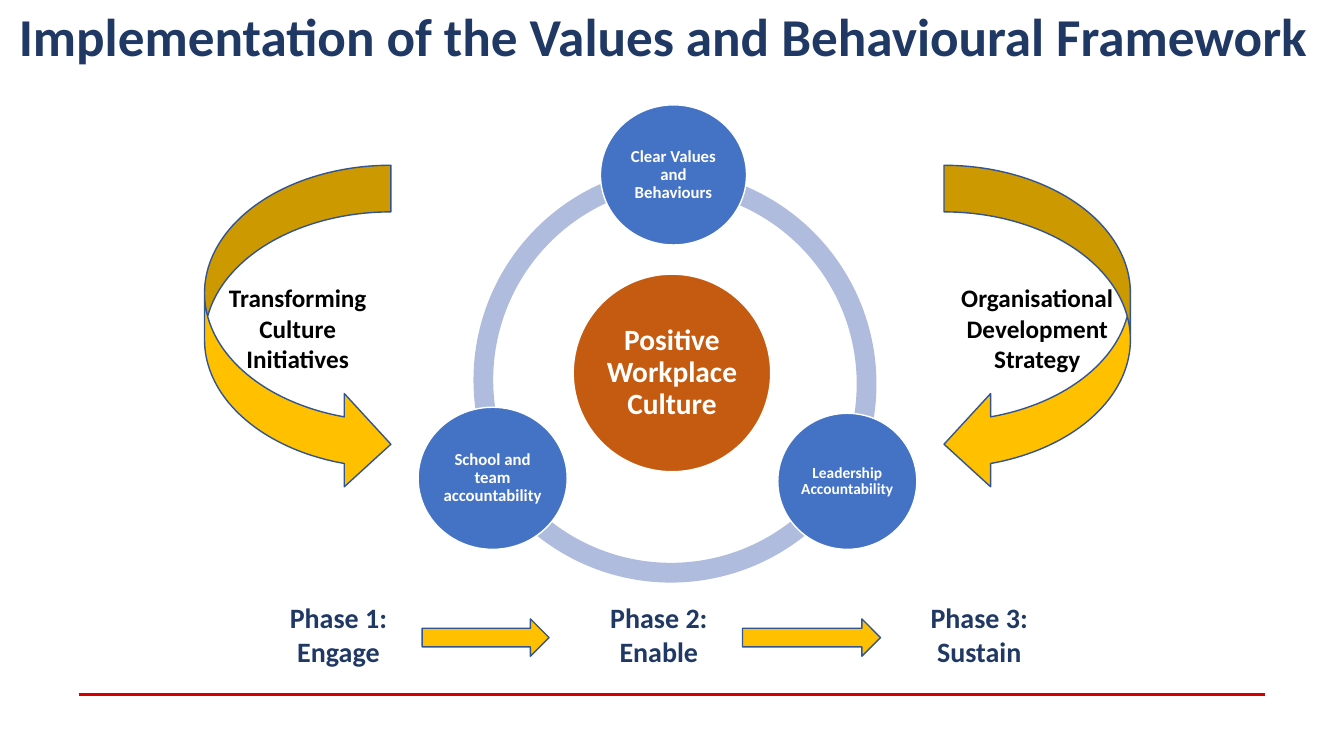
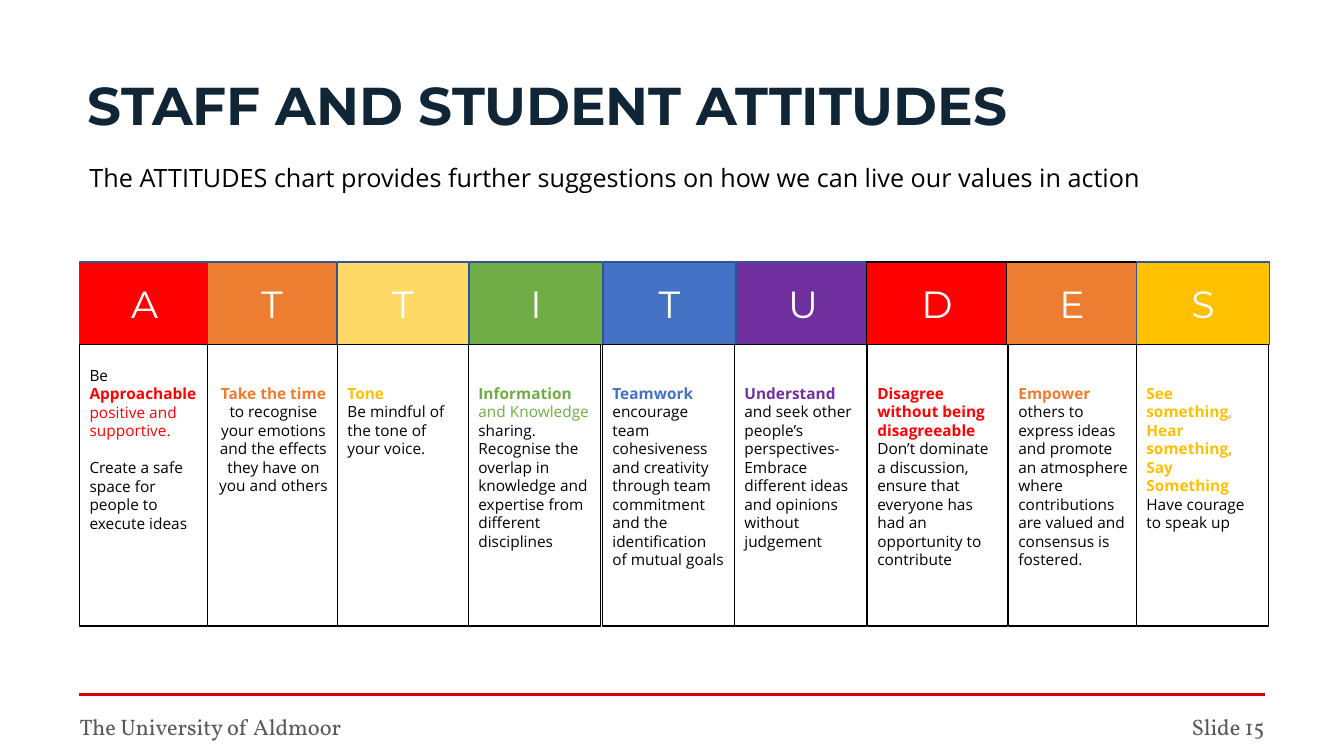
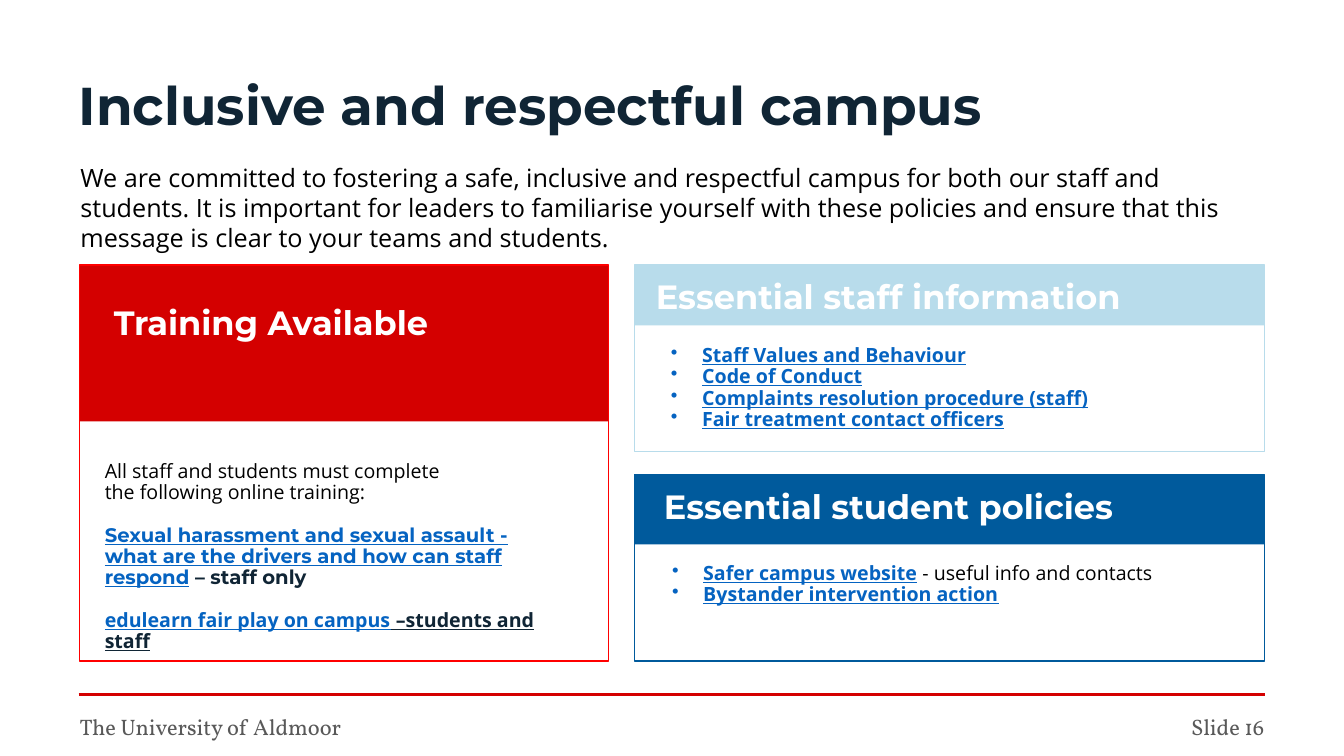
"""Build three slides on workplace values, attitudes and an inclusive campus."""
import dataclasses

import lxml.etree
import pptx
import pptx.dml.color
import pptx.enum.shapes
import pptx.enum.text
import pptx.oxml
import pptx.oxml.ns
import pptx.util

Inches = pptx.util.Inches
Pt = pptx.util.Pt
RGB = pptx.dml.color.RGBColor.from_string
SHAPE = pptx.enum.shapes.MSO_SHAPE
ALIGN = pptx.enum.text.PP_ALIGN
ANCHOR = pptx.enum.text.MSO_ANCHOR
qn = pptx.oxml.ns.qn


@dataclasses.dataclass(frozen=True)
class Style:
    size: float
    font: str
    color: str
    bold: bool = False
    underline: bool = False


@dataclasses.dataclass(frozen=True)
class Theme:
    white: str = "FFFFFF"
    black: str = "000000"
    red: str = "D40000"
    bright_red: str = "FF0000"
    orange: str = "ED7D31"
    rust: str = "C55A11"
    gold: str = "FFC000"
    pale_gold: str = "FFD966"
    green: str = "70AD47"
    blue: str = "4472C4"
    purple: str = "7030A0"
    ring: str = "B0BCDE"
    outline: str = "325491"
    pale_blue: str = "B8DCEB"
    deep_blue: str = "005A9C"
    navy: str = "203864"
    ink: str = "102535"
    link: str = "0563C1"
    framework_title: Style = Style(38, "Calibri", navy, True)
    title: Style = Style(38, "Montserrat", ink, True)
    footer: Style = Style(16, "Vollkorn", "595959")
    intro: Style = Style(18, "Open Sans", black)
    core: Style = Style(21, "Calibri", white, True)
    strategy: Style = Style(18, "Calibri", black, True)
    phase: Style = Style(20, "Calibri", navy, True)
    letter: Style = Style(27, "Montserrat", white)
    attitude: Style = Style(11, "Open Sans", black)
    card_heading: Style = Style(24, "Montserrat", white, True)
    card_body: Style = Style(14, "Open Sans", black)
    card_link: Style = Style(14, "Open Sans", link, True, True)
    attitude_gap: float = 13.3
    card_gap: float = 15.2


theme = Theme()
restyle = dataclasses.replace


def write(frame, paragraphs, align=ALIGN.LEFT, anchor=ANCHOR.TOP, inset=(0, 0), spacing=0.9):
    frame.word_wrap = True
    frame.auto_size = pptx.enum.text.MSO_AUTO_SIZE.NONE
    frame.vertical_anchor = anchor
    frame.margin_left = frame.margin_right = Inches(inset[0])
    frame.margin_top = frame.margin_bottom = Inches(inset[1])
    for index, runs in enumerate(paragraphs):
        paragraph = frame.add_paragraph() if index else frame.paragraphs[0]
        paragraph.alignment = align
        paragraph.line_spacing = spacing
        for text, style in runs:
            run = paragraph.add_run()
            run.text = text
            run.font.size = Pt(style.size)
            run.font.name = style.font
            run.font.bold = style.bold
            run.font.underline = style.underline
            run.font.color.rgb = RGB(style.color)


def add_shape(slide, kind, box, fill=None, line=None):
    shape = slide.shapes.add_shape(kind, *map(Inches, box))
    shape.shadow.inherit = False
    if fill:
        shape.fill.solid()
        shape.fill.fore_color.rgb = RGB(fill)
    else:
        shape.fill.background()
    if line:
        shape.line.color.rgb = RGB(line)
        shape.line.width = Pt(1)
    else:
        shape.line.fill.background()
    return shape


deck = pptx.Presentation()
deck.slide_width, deck.slide_height = Inches(13.34), Inches(7.5)
layout = deck.slide_layouts[5]

headings = [
    ("Implementation of the Values and Behavioural Framework", theme.framework_title,
     (0.09, 0.1, 12.99, 0.86), ALIGN.CENTER, None),
    ("STAFF AND STUDENT ATTITUDES", theme.title, (0.87, 0.79, 11.76, 1.18), ALIGN.LEFT, "Slide 15"),
    ("Inclusive and respectful campus", theme.title, (0.78, 0.79, 11.76, 1.18), ALIGN.LEFT, "Slide 16"),
]
for heading, style, box, align, number in headings:
    slide = deck.slides.add_slide(layout)
    title = slide.shapes.title
    title.left, title.top, title.width, title.height = map(Inches, box)
    write(title.text_frame, [[(heading, style)]], align)
    if number:
        for text, left, width, side in [
            ("The University of Aldmoor", 0.79, 5.25, ALIGN.LEFT),
            (number, 9.92, 2.63, ALIGN.RIGHT),
        ]:
            footer = slide.shapes.add_textbox(Inches(left), Inches(7.08), Inches(width), Inches(0.2))
            write(footer.text_frame, [[(text, theme.footer)]], side, spacing=1.0)

framework, attitudes, campus = deck.slides

rule = framework.shapes.add_connector(
    pptx.enum.shapes.MSO_CONNECTOR.STRAIGHT, Inches(0.78), Inches(6.89), Inches(12.56), Inches(6.89))
rule.line.color.rgb = RGB(theme.red)
rule.line.width = Pt(2.5)
lxml.etree.SubElement(rule.element.spPr, qn("a:effectLst"))
rule.element.nvCxnSpPr.cNvPr.set("id", "20")
layout.shapes.element.append(rule.element)

for left, top, start, end in [
    (4.7, 1.64, 92.09, 160.99),
    (4.53, 1.52, 19.6, 89.02),
    (4.44, 1.68, 164.01, 16.56),
]:
    arc = add_shape(framework, SHAPE.BLOCK_ARC, (left, top, 4.26, 4.26), theme.ring)
    for index, value in enumerate((start, end, 0.046)):
        arc.adjustments[index] = value

for text, box, fill, size in [
    ("Positive Workplace Culture", (5.69, 2.72, 1.96, 1.96), theme.rust, 21),
    ("Clear Values and Behaviours", (5.96, 1.04, 1.45, 1.39), theme.blue, 12),
    ("Leadership Accountability", (7.72, 4.1, 1.38, 1.35), theme.blue, 11),
    ("School and team accountability", (4.15, 4.04, 1.48, 1.41), theme.blue, 12),
]:
    circle = add_shape(framework, SHAPE.OVAL, box, fill, theme.white)
    write(circle.text_frame, [[(text, restyle(theme.core, size=size))]],
          ALIGN.CENTER, ANCHOR.MIDDLE, (0.02, 0.02))

for text, kind, left in [
    ("Organisational Development Strategy", SHAPE.CURVED_LEFT_ARROW, 9.37),
    ("Transforming Culture Initiatives", SHAPE.CURVED_RIGHT_ARROW, 2.03),
]:
    strategy = add_shape(framework, kind, (left, 1.64, 1.85, 3.23), theme.gold, theme.outline)
    write(strategy.text_frame, [[(text, theme.strategy)]],
          ALIGN.CENTER, ANCHOR.MIDDLE, (0.1, 0.05), 1.0)

phase_width = 1.66
for index, (text, arrow_width) in enumerate([
    ("Phase 1: Engage", 1.26), ("Phase 2: Enable", 1.37), ("Phase 3: Sustain", None),
]):
    left = 2.53 + index * 3.18
    phase = add_shape(framework, SHAPE.RECTANGLE, (left, 5.95, phase_width, 0.69), theme.white, theme.white)
    write(phase.text_frame, [[(text, theme.phase)]], ALIGN.CENTER, ANCHOR.MIDDLE, (0.1, 0.05), 1.0)
    if arrow_width:
        add_shape(framework, SHAPE.RIGHT_ARROW, (left + phase_width, 6.14, arrow_width, 0.37),
                  theme.gold, theme.outline)

for slide, text, box in [
    (attitudes, "The ATTITUDES chart provides further suggestions on how we can live our values in action",
     (0.79, 1.56, 11.64, 0.4)),
    (campus, "We are committed to fostering a safe, inclusive and respectful campus for both our staff and "
     "students. It is important for leaders to familiarise yourself with these policies and ensure that "
     "this message is clear to your teams and students.", (0.7, 1.56, 11.64, 1.01)),
]:
    intro = slide.shapes.add_textbox(*map(Inches, box))
    write(intro.text_frame, [[(text, theme.intro)]], inset=(0.1, 0.05), spacing=1.0)

plain = theme.attitude
red_word, orange_word, gold_word, green_word, blue_word, purple_word = [
    restyle(plain, color=color, bold=True)
    for color in (theme.bright_red, theme.orange, theme.gold, theme.green, theme.blue, theme.purple)
]
columns = [
    ("A", theme.bright_red, theme.outline, (0.79, 1.29), (0.79, 1.28), [
        [("Be ", plain), ("Approachable", red_word),
         (" positive and supportive.", restyle(red_word, bold=False))],
        [("Create a safe space for people to execute ideas", plain)]]),
    ("T", theme.orange, theme.outline, (2.06, 1.28), (2.06, 1.31), [
        [("Take the time ", orange_word),
         ("to recognise your emotions and the effects they have on you and others", plain)]]),
    ("T", theme.pale_gold, theme.outline, (3.35, 1.3), (3.35, 1.31), [
        [("Tone", gold_word)], [("Be mindful of the tone of your voice.", plain)]]),
    ("I", theme.green, theme.outline, (4.66, 1.32), (4.65, 1.31), [
        [("Information", green_word), (" and Knowledge ", restyle(green_word, bold=False)),
         ("sharing. Recognise the overlap in knowledge and expertise from different disciplines", plain)]]),
    ("T", theme.blue, theme.outline, (5.99, 1.31), (5.98, 1.31), [
        [("Teamwork ", blue_word),
         ("encourage team cohesiveness and creativity through team commitment and the identification "
          "of mutual goals", plain)]]),
    ("U", theme.purple, theme.outline, (7.31, 1.32), (7.29, 1.31), [
        [("Understand ", purple_word),
         ("and seek other people’s perspectives-Embrace different ideas and opinions without judgement",
          plain)]]),
    ("D", theme.bright_red, theme.black, (8.6, 1.4), (8.61, 1.39), [
        [("Disagree without being disagreeable", red_word)],
        [("Don’t dominate a discussion, ensure that everyone has had an opportunity to contribute", plain)]]),
    ("E", theme.orange, theme.black, (9.99, 1.3), (10.01, 1.32), [
        [("Empower ", orange_word),
         ("others to express ideas and promote an atmosphere where contributions are valued and "
          "consensus is fostered.", plain)]]),
    ("S", theme.gold, theme.outline, (11.28, 1.32), (11.28, 1.31), [
        [("See something", gold_word), (", ", restyle(gold_word, bold=False)), ("Hear something,", gold_word)],
        [("Say Something ", gold_word), ("Have courage to speak up", plain)]]),
]
for index, (letter, color, border, letter_span, advice_span, advice) in enumerate(columns):
    left, width = letter_span
    letter_tile = add_shape(attitudes, SHAPE.RECTANGLE, (left, 2.6, width, 0.82), color, border)
    write(letter_tile.text_frame, [[(letter, theme.letter)]],
          ALIGN.CENTER, ANCHOR.MIDDLE, (0.1, 0.05), 1.0)
    left, width = advice_span
    advice_tile = add_shape(attitudes, SHAPE.RECTANGLE, (left, 3.42, width, 2.79), theme.white, theme.black)
    write(advice_tile.text_frame, advice, ALIGN.CENTER if index == 1 else ALIGN.LEFT,
          inset=(0.1, 0.39 if index else 0.21), spacing=1.0)
    if index == 0:
        advice_tile.text_frame.paragraphs[1].space_before = Pt(theme.attitude_gap)

for heading, color, border, band, height, heading_box in [
    ("Training Available", theme.red, theme.bright_red, (0.79, 2.63, 5.25, 1.55), 3.93, (1.13, 3.04, 4.56, 1.18)),
    ("Essential staff information", theme.pale_blue, theme.pale_blue, (6.3, 2.63, 6.25, 0.6), 1.85,
     (6.51, 2.78, 5.65, 0.35)),
    ("Essential student policies", theme.deep_blue, theme.deep_blue, (6.3, 4.71, 6.25, 0.69), 1.85,
     (6.59, 4.87, 5.65, 0.35)),
]:
    add_shape(campus, SHAPE.RECTANGLE, band, color)
    add_shape(campus, SHAPE.RECTANGLE, (*band[:3], height), line=border)
    card_heading = campus.shapes.add_textbox(*map(Inches, heading_box))
    write(card_heading.text_frame, [[(heading, theme.card_heading)]])

training_link = restyle(theme.card_link, font="Montserrat")
training = campus.shapes.add_textbox(Inches(1.04), Inches(4.58), Inches(4.56), Inches(1.9))
write(training.text_frame, [
    [("All staff and students must complete", theme.card_body)],
    [("the following online training:", theme.card_body)],
    [("Sexual harassment and sexual assault - what are the drivers and how can staff respond", training_link),
     (" – staff only", restyle(training_link, color=theme.ink, underline=False))],
    [("edulearn fair play on campus", theme.card_link),
     (" –students and staff", restyle(theme.card_link, color=theme.ink))],
])
for paragraph in training.text_frame.paragraphs[2:]:
    paragraph.space_before = Pt(theme.card_gap)

for box, policies in [
    ((6.66, 3.43, 5.5, 0.75), [
        [("Staff Values and Behaviour", theme.card_link)],
        [("Code of Conduct", theme.card_link)],
        [("Complaints resolution procedure (staff)", theme.card_link)],
        [("Fair treatment contact officers", theme.card_link)]]),
    ((6.67, 5.59, 5.78, 0.75), [
        [("Safer campus website", theme.card_link), (" - useful info and contacts", theme.card_body)],
        [("Bystander intervention action", theme.card_link)]]),
]:
    policy_list = campus.shapes.add_textbox(*map(Inches, box))
    write(policy_list.text_frame, policies)
    for paragraph in policy_list.text_frame.paragraphs:
        properties = paragraph._p.get_or_add_pPr()
        properties.set("marL", str(Inches(0.31)))
        properties.set("indent", str(-Inches(0.31)))
        lxml.etree.SubElement(properties, qn("a:buChar"), char="•")

deck.save("out.pptx")
